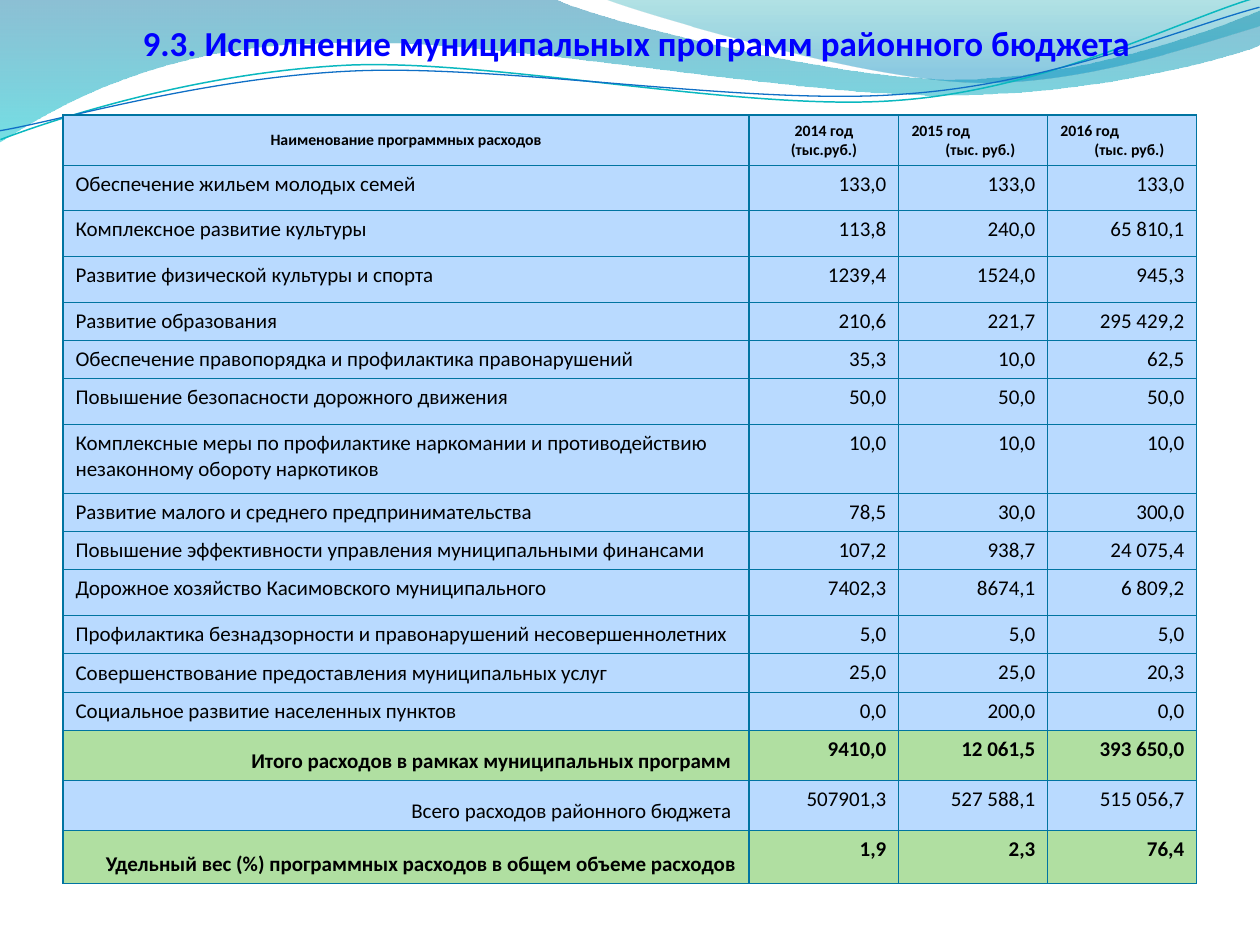
"""Build the slide on municipal programme spending of the district budget."""
from lxml.etree import SubElement
from pptx import Presentation
from pptx.dml.color import RGBColor
from pptx.enum.text import MSO_ANCHOR, PP_ALIGN
from pptx.oxml.ns import qn
from pptx.util import Pt

SCALE = 914400 / 126


def px(length):
    return round(length * SCALE)


def rgb(value):
    return RGBColor.from_string(value)


prs = Presentation()
prs.slide_width, prs.slide_height = px(1260), px(945)
slide = prs.slides.add_slide(prs.slide_layouts[6])

waves = [
    ([[(0, 0)], [(554, -1)], [(600, 21), (837, 79), (955, 79)],
      [(1075, 79), (1207, 33), (1260, 11)], [(1261, 45)],
      [(1239, 55), (1096, 96), (940, 95)], [(781, 95), (481, 35), (324, 43)],
      [(163, 45), (58, 105), (-1, 142)]],
     [(0, "0074A1", 45), (1, "00C6CF", 55)], None),
    ([[(604, -1)], [(641, 14), (859, 78), (969, 82)],
      [(1079, 87), (1211, 40), (1260, 26)], [(1260, 0)]],
     [(0, "00A1A9", 30), (0.8, "008BBF", 45)], None),
    ([[(-2, 110)], [(59, 90), (200, 52), (350, 52)],
      [(498, 53), (745, 118), (897, 113)], [(1048, 109), (1184, 45), (1260, 27)]],
     None, ("0AB8BF", 0.85)),
    ([[(-2, 101)], [(58, 94), (207, 57), (357, 58)],
      [(508, 59), (751, 112), (902, 107)], [(1052, 104), (1187, 53), (1262, 37)]],
     None, ("0F6FC6", 0.75)),
]
for segments, gradient, stroke in waves:
    outline = [(px(x), px(y)) for segment in segments for x, y in segment]
    builder = slide.shapes.build_freeform(*outline[0])
    builder.add_line_segments(outline[1:], close=bool(gradient))
    wave = builder.convert_to_shape()
    wave.shadow.inherit = False
    straights = iter(list(wave._element.iter(qn("a:lnTo"))))
    for segment in segments[1:]:
        parts = [next(straights) for point in segment]
        if len(parts) == 3:
            curve = parts[0].makeelement(qn("a:cubicBezTo"))
            parts[0].addprevious(curve)
            for part in parts:
                curve.append(part[0])
                part.getparent().remove(part)
    if gradient:
        wave.line.fill.background()
        wave.fill.gradient()
        wave.fill.gradient_angle = 270
        for stop, (position, color, opacity) in zip(wave.fill.gradient_stops, gradient):
            stop.position = position
            stop.color.rgb = rgb(color)
        tints = wave._element.spPr.iter(qn("a:srgbClr"))
        for tint, (position, color, opacity) in zip(tints, gradient):
            SubElement(tint, qn("a:alpha"), val=str(opacity * 1000))
    else:
        wave.rotation = 357.3
        wave.fill.background()
        wave.line.color.rgb = rgb(stroke[0])
        wave.line.width = Pt(stroke[1])

heading = slide.shapes.add_textbox(px(48), px(15), px(1177), px(55)).text_frame
heading.word_wrap = True
heading.vertical_anchor = MSO_ANCHOR.MIDDLE
title = heading.paragraphs[0]
title.text = "9.3. Исполнение муниципальных программ районного бюджета"
title.alignment = PP_ALIGN.CENTER
title.font.name, title.font.size, title.font.bold = "Calibri", Pt(20), True
title.font.color.rgb = rgb("0000FF")

programs = [
    (50, "Наименование программных расходов", "2014 год (тыс.руб.)",
     "2015 год\v(тыс. руб.)", "2016 год\v(тыс. руб.)"),
    (45, "Обеспечение жильем молодых семей", "133,0", "133,0", "133,0"),
    (46, "Комплексное развитие культуры", "113,8", "240,0", "65 810,1"),
    (46, "Развитие физической культуры и спорта", "1239,4", "1524,0", "945,3"),
    (38, "Развитие образования", "210,6", "221,7", "295 429,2"),
    (38, "Обеспечение правопорядка и профилактика правонарушений", "35,3", "10,0", "62,5"),
    (46, "Повышение безопасности дорожного движения", "50,0", "50,0", "50,0"),
    (69, "Комплексные меры по профилактике наркомании и противодействию "
         "незаконному обороту наркотиков", "10,0", "10,0", "10,0"),
    (38, "Развитие малого и среднего предпринимательства", "78,5", "30,0", "300,0"),
    (38, "Повышение эффективности управления муниципальными финансами",
     "107,2", "938,7", "24 075,4"),
    (46, "Дорожное хозяйство Касимовского муниципального", "7402,3", "8674,1", "6 809,2"),
    (38, "Профилактика безнадзорности и правонарушений несовершеннолетних",
     "5,0", "5,0", "5,0"),
    (39, "Совершенствование предоставления муниципальных услуг", "25,0", "25,0", "20,3"),
    (38, "Социальное развитие населенных пунктов", "0,0", "200,0", "0,0"),
    (50, "Итого расходов в рамках муниципальных программ ", "9410,0", "12 061,5", "393 650,0"),
    (50, "Всего расходов районного бюджета ", "507901,3", "527 588,1", "515 056,7"),
    (53, "Удельный вес (%) программных расходов в общем объеме расходов", "1,9", "2,3", "76,4"),
]
FIRST_BOTTOM, FIRST_TOTAL, HIGHLIGHTED = 12, 14, (14, 16)
spending = slide.shapes.add_table(len(programs), 4, px(63), px(115), px(1134), px(768)).table
spending.horz_banding = False
for column, width in zip(spending.columns, (686, 150, 149, 149)):
    column.width = px(width)

for r, (height, *texts) in enumerate(programs):
    spending.rows[r].height = px(height)
    for c, text in enumerate(texts):
        cell = spending.cell(r, c)
        edges = cell._tc.get_or_add_tcPr()
        for side in ("lnL", "lnR", "lnT", "lnB"):
            edge = SubElement(edges, qn(f"a:{side}"), w=str(Pt(0.75)))
            SubElement(SubElement(edge, qn("a:solidFill")), qn("a:srgbClr"), val="0074A1")
        cell.fill.solid()
        cell.fill.fore_color.rgb = rgb("B0DFA1" if r in HIGHLIGHTED else "B9DAFF")
        entry = cell.text_frame.paragraphs[0]
        entry.text = text
        entry.font.name = "Calibri"
        entry.font.size = Pt(12 if r else 9)
        entry.font.bold = r == 0 or r in HIGHLIGHTED
        entry.font.color.rgb = rgb("000000")
        if r == 0:
            cell.vertical_anchor = MSO_ANCHOR.MIDDLE
            entry.alignment = PP_ALIGN.CENTER if c < 2 else PP_ALIGN.LEFT
            if c >= 2:
                hanging = entry._p.get_or_add_pPr()
                hanging.set("marL", str(px(34)))
                hanging.set("indent", str(-px(34)))
        else:
            right = c > 0 or r >= FIRST_TOTAL
            entry.alignment = PP_ALIGN.RIGHT if right else PP_ALIGN.LEFT
            bottom = c == 0 and r >= FIRST_BOTTOM
            cell.vertical_anchor = MSO_ANCHOR.BOTTOM if bottom else MSO_ANCHOR.TOP

prs.save("out.pptx")
